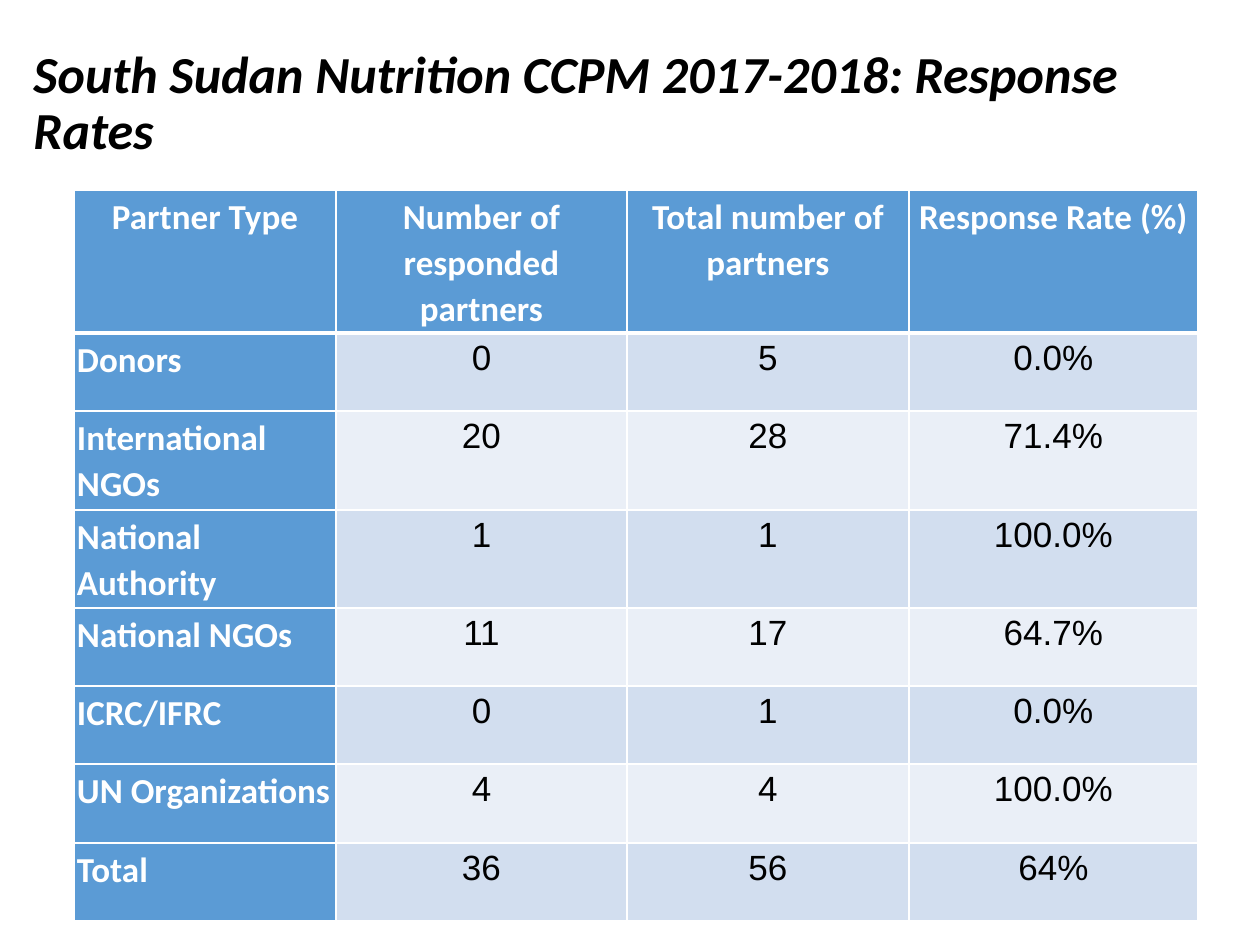
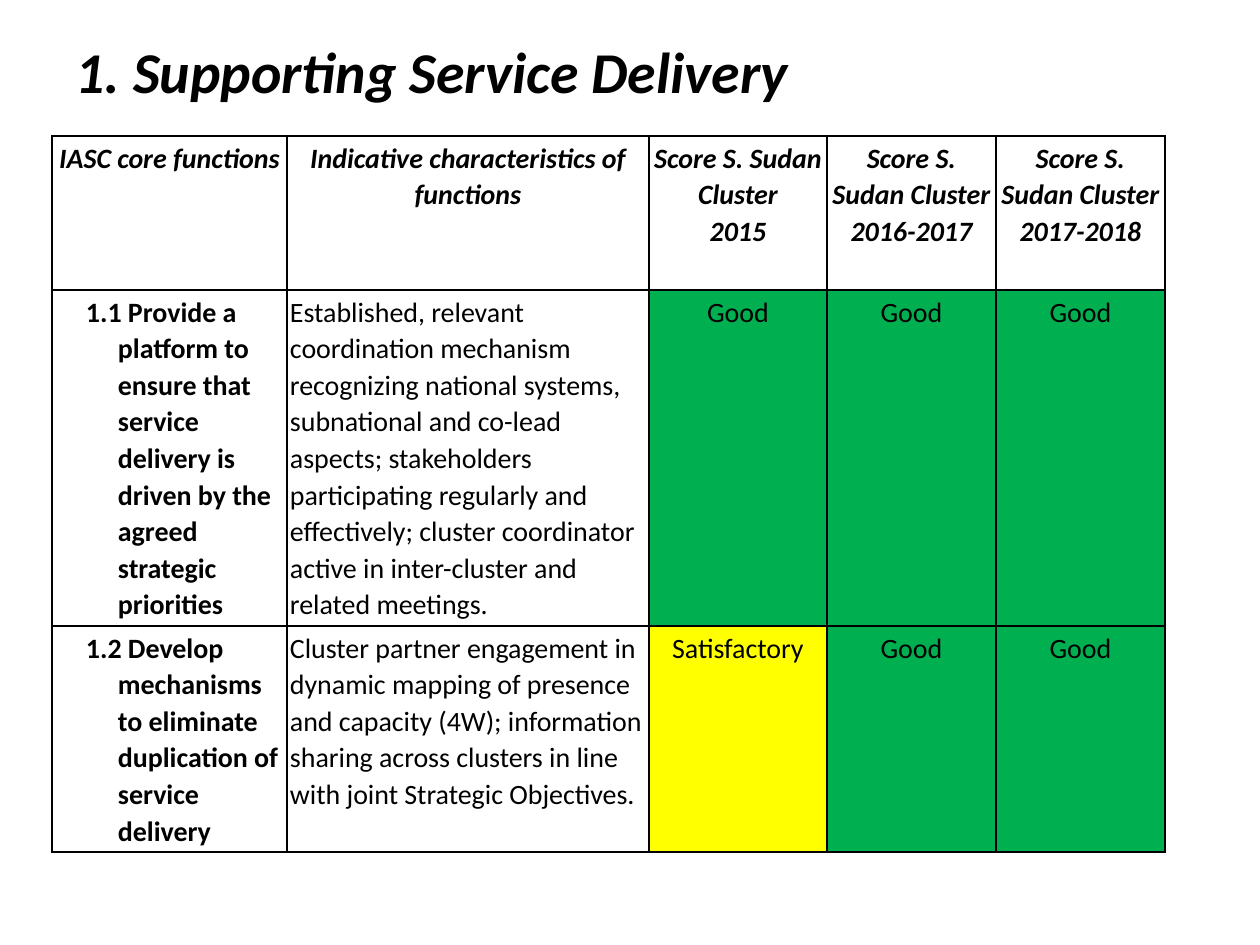
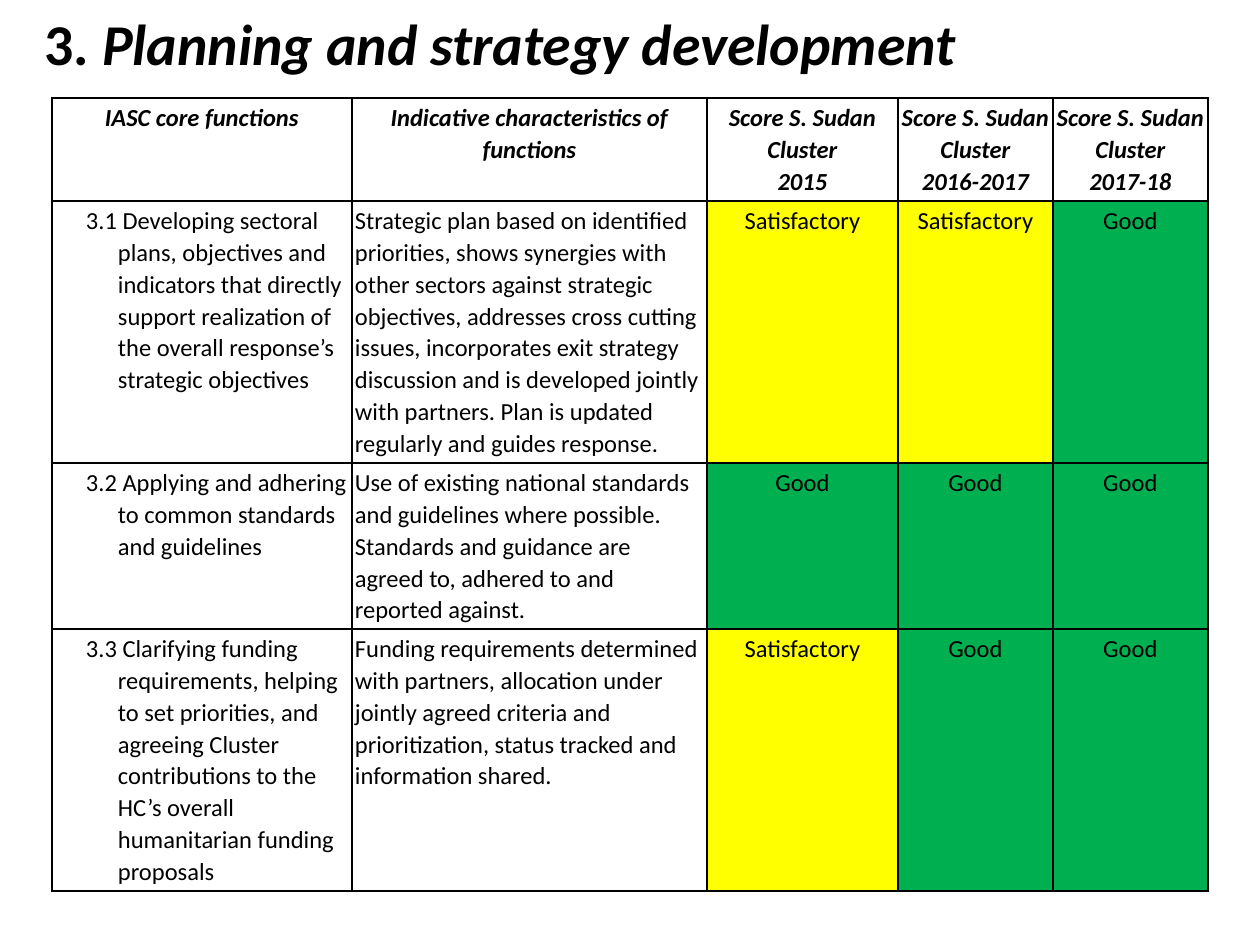
from lxml import etree
from pptx import Presentation
from pptx import util as u
from pptx.dml.color import RGBColor
from pptx.enum import text
from pptx.oxml.ns import qn

COLORS = {
    "ink": "000000", "paper": "FFFFFF", "head": "5B9BD5",
    "odd": "D2DEEF", "even": "EAEFF7",
    "Good": "00B050", "Satisfactory": "FFFF00",
}
PX = u.Inches(1) / 126
CELL_INSET = 3

RATES = {
    "title": [("South Sudan Nutrition CCPM 2017-2018: Response Rates", True)],
    "title_size": 29.7,
    "title_box": (21, 53, 1218, 103),
    "origin": (74, 190),
    "cols": (262, 291, 282, 289),
    "heights": (143, 78, 99, 98, 78, 78, 79, 78),
    "rows": [
        ("Partner Type", "Number of responded partners", "Total number of partners", "Response Rate (%)"),
        ("Donors", "0", "5", "0.0%"),
        ("International NGOs", "20", "28", "71.4%"),
        ("National Authority", "1", "1", "100.0%"),
        ("National NGOs", "11", "17", "64.7%"),
        ("ICRC/IFRC", "0", "1", "0.0%"),
        ("UN Organizations", "4", "4", "100.0%"),
        ("Total", "36", "56", "64%"),
    ],
}

SCORECARDS = [
    {
        "title": [("1. Supporting Service Delivery", True)],
        "title_size": 33,
        "title_box": (63, 21, 1155, 107),
        "origin": (52, 136),
        "cols": (235, 362, 178, 169, 169),
        "heights": (154, 336, 226),
        "size": 16,
        "function_bold": True,
        "years": ("2015", "2016-2017", "2017-2018"),
        "functions": [
            ("1.1 Provide a platform to ensure that service delivery is driven by the agreed strategic priorities",
             "Established, relevant coordination mechanism recognizing national systems, subnational and co-lead "
             "aspects; stakeholders participating regularly and effectively; cluster coordinator active in "
             "inter-cluster and related meetings.",
             "Good", "Good", "Good"),
            ("1.2 Develop mechanisms to eliminate duplication of service delivery",
             "Cluster partner engagement in dynamic mapping of presence and capacity (4W); information sharing "
             "across clusters in line with joint Strategic Objectives.",
             "Satisfactory", "Good", "Good"),
        ],
    },
    {
        "title": [("3. ", False), ("Planning and strategy development", True)],
        "title_size": 33,
        "title_box": (32, 0, 1197, 94),
        "origin": (52, 98),
        "cols": (300, 355, 191, 155, 155),
        "heights": (103, 262, 166, 262),
        "size": 14,
        "function_bold": False,
        "years": ("2015", "2016-2017", "2017-18"),
        "functions": [
            ("3.1 Developing sectoral plans, objectives and indicators that directly support realization of the "
             "overall response’s strategic objectives",
             "Strategic plan based on identified priorities, shows synergies with other sectors against strategic "
             "objectives, addresses cross cutting issues, incorporates exit strategy discussion and is developed "
             "jointly with partners. Plan is updated regularly and guides response.",
             "Satisfactory", "Satisfactory", "Good"),
            ("3.2 Applying and adhering to common standards and guidelines",
             "Use of existing national standards and guidelines where possible. Standards and guidance are agreed "
             "to, adhered to and reported against.",
             "Good", "Good", "Good"),
            ("3.3 Clarifying funding requirements, helping to set priorities, and agreeing Cluster contributions "
             "to the HC’s overall humanitarian funding proposals",
             "Funding requirements determined with partners, allocation under jointly agreed criteria and "
             "prioritization, status tracked and information shared.",
             "Satisfactory", "Good", "Good"),
        ],
    },
]


def px(length):
    return u.Emu(round(length * PX))


def style_font(font, size, color="ink", bold=False, italic=False, face="Calibri"):
    font.name, font.size, font.bold, font.italic = face, u.Pt(size), bold, italic
    font.color.rgb = RGBColor.from_string(COLORS[color])


def add_titled_slide(deck, content):
    slide = deck.slides.add_slide(deck.slide_layouts[6])
    frame = slide.shapes.add_textbox(*map(px, content["title_box"])).text_frame
    frame.word_wrap = True
    frame.vertical_anchor = text.MSO_ANCHOR.MIDDLE
    heading = frame.paragraphs[0]
    heading.line_spacing = 0.9
    for words, italic in content["title"]:
        run = heading.add_run()
        run.text = words
        style_font(run.font, content["title_size"], bold=True, italic=italic)
    return slide


def add_grid(slide, content, row_count):
    cols, heights = content["cols"], content["heights"]
    box = (*content["origin"], sum(cols), sum(heights))
    table = slide.shapes.add_table(row_count, len(cols), *map(px, box)).table
    table.first_row = table.horz_banding = False
    for column, width in zip(table.columns, cols):
        column.width = px(width)
    for row, height in zip(table.rows, heights):
        row.height = px(height)
    return table


def draw_borders(cell, color, top=1, bottom=1):
    props = cell._tc.get_or_add_tcPr()
    for side, points in (("lnL", 1), ("lnR", 1), ("lnT", top), ("lnB", bottom)):
        line = etree.SubElement(props, qn(f"a:{side}"), w=str(u.Pt(points)))
        fill = etree.SubElement(line, qn("a:solidFill"))
        etree.SubElement(fill, qn("a:srgbClr"), val=COLORS[color])


def fill_cell(cell, words, fill, centred, hanging=False, **font):
    if fill:
        cell.fill.solid()
        cell.fill.fore_color.rgb = RGBColor.from_string(COLORS[fill])
    else:
        cell.fill.background()
    cell.margin_left = cell.margin_right = cell.margin_top = cell.margin_bottom = px(CELL_INSET)
    cell.text = words
    for paragraph in cell.text_frame.paragraphs:
        paragraph.line_spacing = 1.07
        paragraph.alignment = text.PP_ALIGN.CENTER if centred else text.PP_ALIGN.LEFT
        if hanging:
            props = paragraph._p.get_or_add_pPr()
            props.set("marL", str(px(63)))
            props.set("indent", str(px(-32)))
        for run in paragraph.runs:
            style_font(run.font, **font)


def add_rates(deck, content):
    table = add_grid(add_titled_slide(deck, content), content, len(content["rows"]))
    for r, row in enumerate(content["rows"]):
        for c, words in enumerate(row):
            cell = table.cell(r, c)
            draw_borders(cell, "paper", top=3 if r == 1 else 1, bottom=3 if r == 0 else 1)
            if r == 0 or c == 0:
                fill_cell(cell, words, "head", r == 0, size=20, color="paper", bold=True)
            else:
                fill_cell(cell, words, "odd" if r % 2 else "even", True, size=20, face="Arial")


def add_scorecard(deck, content):
    header = ["IASC core functions", "Indicative characteristics of functions"]
    header += [f"Score S. Sudan Cluster\n{year}" for year in content["years"]]
    rows = [header, *content["functions"]]
    table = add_grid(add_titled_slide(deck, content), content, len(rows))
    for r, row in enumerate(rows):
        for c, words in enumerate(row):
            cell = table.cell(r, c)
            draw_borders(cell, "ink")
            is_header, is_function = r == 0, r > 0 and c == 0
            fill_cell(cell, words, words if words in COLORS else None, is_header or c > 1,
                      hanging=is_function, size=content["size"], italic=is_header,
                      bold=is_header or (is_function and content["function_bold"]))


def main():
    deck = Presentation()
    deck.slide_width, deck.slide_height = px(1260), px(945)
    add_rates(deck, RATES)
    for scorecard in SCORECARDS:
        add_scorecard(deck, scorecard)
    deck.save("out.pptx")


if __name__ == "__main__":
    main()
